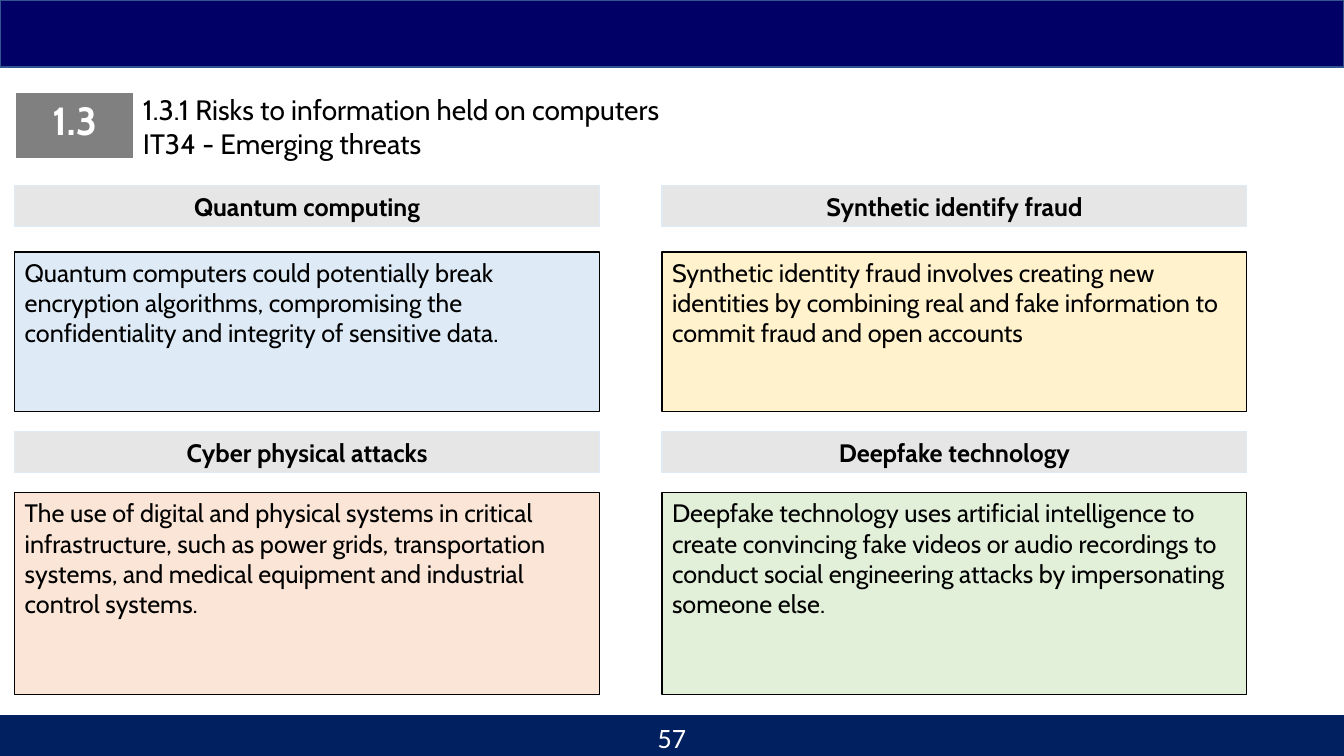
from pptx import Presentation
from pptx.dml.color import RGBColor
from pptx.enum.shapes import MSO_SHAPE as Shape
from pptx.enum.text import MSO_ANCHOR as Anchor, PP_ALIGN as Align
from pptx.oxml.ns import qn
from pptx.util import Pt
from lxml.etree import SubElement

WIDTH, HEIGHT = 960, 540
BODY = {"name": "Cabin", "size": Pt(18), "bold": False}
HEADING = {**BODY, "bold": True}
TITLE = {**BODY, "size": Pt(20)}
BADGE = {**HEADING, "size": Pt(28)}
NUMBER = {**TITLE, "name": "Calibri"}

# Left, top and height of each card, then its colour and wording
CARDS = [
    (10.6, 132.5, 161.3, "DEEBF7", "Quantum computing",
     "Quantum computers could potentially break encryption algorithms, "
     "compromising the confidentiality and integrity of sensitive data."),
    (473, 132.5, 161.3, "FFF2CC", "Synthetic identify fraud",
     "Synthetic identity fraud involves creating new identities by combining "
     "real and fake information to commit fraud and open accounts"),
    (10.6, 308.2, 187.8, "FBE5D6", "Cyber physical attacks",
     "The use of digital and physical systems in critical infrastructure, "
     "such as power grids, transportation systems, and medical equipment "
     "and industrial control systems."),
    (473, 308.2, 187.8, "E2F0D9", "Deepfake technology",
     "Deepfake technology uses artificial intelligence to create convincing "
     "fake videos or audio recordings to conduct social engineering attacks "
     "by impersonating someone else."),
]
CARD_WIDTH, HEADING_HEIGHT = 417.6, 29.5


def color(value):
    return RGBColor.from_string(value)


def write(frame, lines, style, ink="000000", align=Align.LEFT):
    frame.word_wrap = True
    for index, line in enumerate(lines):
        para = frame.paragraphs[0] if index == 0 else frame.add_paragraph()
        para.alignment = align
        span = para.add_run()
        span.text = line
        for name, value in style.items():
            setattr(span.font, name, value)
        span.font.color.rgb = color(ink)


def add_box(page, box, fill, line, anchor=Anchor.TOP):
    shape = page.shapes.add_shape(Shape.RECTANGLE, *map(Pt, box))
    shape.shadow.inherit = False
    shape.fill.solid()
    shape.fill.fore_color.rgb = color(fill)
    shape.line.color.rgb = color(line)
    shape.line.width = Pt(1)
    shape.text_frame.vertical_anchor = anchor
    return shape.text_frame


def add_label(page, box, lines, style, **options):
    label = page.shapes.add_textbox(*map(Pt, box))
    write(label.text_frame, lines, style, **options)


def add_row(page, box, columns, fill, borders=None):
    """A one-row table; borders gives the white edge widths, if any."""
    table = page.shapes.add_table(1, columns, *map(Pt, box)).table
    table.first_row = table.horz_banding = False
    for cell in table.iter_cells():
        properties = cell._tc.get_or_add_tcPr()
        for side in ("lnL", "lnR", "lnT", "lnB"):
            width = (borders or {}).get(side, 0)
            edge = SubElement(properties, qn("a:" + side), w=str(Pt(width)))
            if width:
                paint = SubElement(edge, qn("a:solidFill"))
                SubElement(paint, qn("a:srgbClr"), val="FFFFFF")
            else:
                SubElement(edge, qn("a:noFill"))
        cell.fill.solid()
        cell.fill.fore_color.rgb = color(fill)
    return table


def add_header(page, box):
    left, top, width, height = box
    # Top band
    add_box(page, (left, top, width, 48), "000066", "325491")
    # Title lines
    add_label(page, (left + 95, top + 62.6, 565, 55.4),
              ["1.3.1 Risks to information held on computers",
               "IT34 - Emerging threats"], TITLE)
    # Section badge
    badge = add_row(page, (left + 10.8, top + 66.2, 85, 48), 1, "808080",
                    {"lnL": 1, "lnR": 1, "lnT": 1, "lnB": 3})
    write(badge.cell(0, 0).text_frame, ["1.3"], BADGE, "FFFFFF", Align.CENTER)


def add_card(page, box, fill, heading, body):
    left, top, width, height = box
    # Heading bar
    bar = add_box(page, (left, top, width, HEADING_HEIGHT),
                  "E7E6E6", "DEEBF7", Anchor.MIDDLE)
    write(bar, [heading], HEADING, align=Align.CENTER)
    # Explanation, aligned to the foot of the card
    body_height = height - HEADING_HEIGHT - (18 if height < 180 else 14.3)
    panel = add_box(page, (left, top + height - body_height, width, body_height),
                    fill, "000000")
    write(panel, [body], BODY)


def add_footer(page, box):
    left, top, width, height = box
    add_row(page, box, 3, "002060")
    add_label(page, (left + (width - 216) / 2, top + 0.7, 216, 28.8),
              ["57"], NUMBER, ink="FFFFFF", align=Align.CENTER)


def main():
    deck = Presentation()
    deck.slide_width, deck.slide_height = Pt(WIDTH), Pt(HEIGHT)
    page = deck.slides.add_slide(deck.slide_layouts[6])
    add_footer(page, (0, 510.5, WIDTH, 29.5))
    add_header(page, (0, 0, WIDTH, 118))
    for left, top, height, *content in CARDS:
        add_card(page, (left, top, CARD_WIDTH, height), *content)
    deck.save("out.pptx")


if __name__ == "__main__":
    main()
